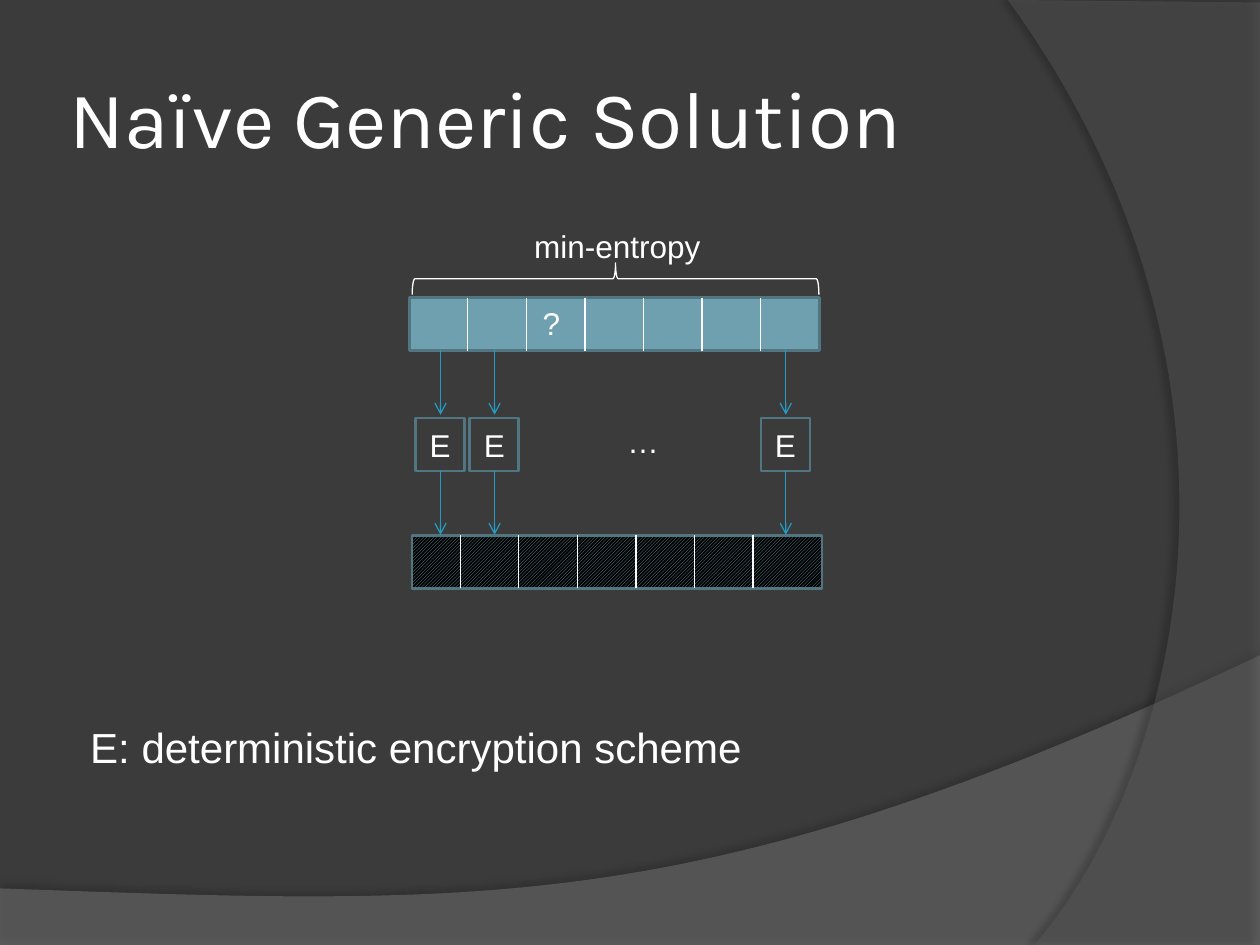
"""Build the slide on the naive generic solution."""
from lxml import etree
from pptx import Presentation
from pptx.dml.color import RGBColor
from pptx.enum.dml import MSO_PATTERN
from pptx.enum.shapes import MSO_CONNECTOR, MSO_SHAPE
from pptx.enum.text import MSO_ANCHOR, MSO_AUTO_SIZE, PP_ALIGN
from pptx.oxml.ns import qn
from pptx.util import Cm, Pt

RECT, BRACE = MSO_SHAPE.RECTANGLE, MSO_SHAPE.RIGHT_BRACE
LINE = MSO_CONNECTOR.STRAIGHT
HATCH = MSO_PATTERN.LIGHT_UPWARD_DIAGONAL
MID, FIT = MSO_ANCHOR.MIDDLE, MSO_AUTO_SIZE.SHAPE_TO_FIT_TEXT
LEFT, CENTER = PP_ALIGN.LEFT, PP_ALIGN.CENTER
WHITE, TEAL, EDGE, BLUE = "FFFFFF", "6EA0B0", "517682", "239BC2"
BLACK, BACK = "000000", "3B3B3B"


def color(text):
    return RGBColor.from_string(text)


def child(node, tag, **attrs):
    return etree.SubElement(node, qn(tag), {k: str(v) for k, v in attrs.items()})


def curve(a, b, c, d, steps=60):
    """Return points along a cubic curve, both ends included."""
    points = []
    for i in range(steps + 1):
        t = i / steps
        u = 1 - t
        points.append(tuple(
            u**3 * p + 3 * u * u * t * q + 3 * u * t * t * r + t**3 * s
            for p, q, r, s in zip(a, b, c, d)))
    return points


class Deck:
    """Hold the style and the current slide."""

    def __init__(self):
        self.show = Presentation()
        self.show.slide_width, self.show.slide_height = Cm(25.4), Cm(19.05)
        self.slide = self.show.slides.add_slide(self.show.slide_layouts[5])
        self.into = self.slide.shapes
        fill = self.slide.background.fill
        fill.solid()
        fill.fore_color.rgb = color(BACK)

    def text(self, frame, words, size, font="Arial", align=LEFT):
        frame.text = words
        para = frame.paragraphs[0]
        para.alignment = align
        para.font.size, para.font.name = Pt(size), font
        para.font.color.rgb = color(WHITE)

    def title(self, words, x, y, w, h):
        shape = self.slide.shapes.title
        shape.left, shape.top, shape.width, shape.height = map(Cm, (x, y, w, h))
        frame = shape.text_frame
        frame.vertical_anchor = MID
        frame.margin_left = frame.margin_right = Cm(0.13)
        self.text(frame, words, 46, "Karla")
        self.slide.shapes._spTree.append(shape._element)

    def swoosh(self, points, tint, alpha, shade, angle, away):
        """Draw a translucent outline with a soft shadow."""
        ends = [(Cm(x), Cm(y)) for x, y in points]
        form = self.into.build_freeform(*ends[0], scale=1.0)
        form.add_line_segments(ends[1:], close=True)
        shape = form.convert_to_shape()
        shape.fill.solid()
        shape.fill.fore_color.rgb = color(tint)
        shape.line.fill.background()
        props = shape._element.spPr
        child(props.find(".//" + qn("a:srgbClr")), "a:alpha", val=alpha * 1000)
        glow = child(child(props, "a:effectLst"), "a:outerShdw", blurRad=Pt(4),
                     dist=Pt(away), dir=angle * 60000, rotWithShape=0)
        child(child(glow, "a:srgbClr", val=BLACK), "a:alpha", val=shade * 1000)

    def shape(self, kind, x, y, w, h, edge=EDGE, width=1.5):
        shape = self.into.add_shape(kind, Cm(x), Cm(y), Cm(w), Cm(h))
        shape.shadow.inherit = False
        shape.fill.background()
        shape.line.color.rgb = color(edge)
        shape.line.width = Pt(width)
        return shape

    def line(self, x, top, end, tint=WHITE, arrow=False):
        """Draw a vertical line."""
        link = self.into.add_connector(LINE, Cm(x), Cm(top), Cm(x), Cm(end))
        link.line.color.rgb = color(tint)
        link.line.width = Pt(0.75)
        props = link._element.spPr
        if arrow:
            child(props.find(qn("a:ln")), "a:tailEnd", type="arrow")
        child(props, "a:effectLst")

    def bar(self, x, y, first, hatch=False):
        """Draw a bar cut into seven cells."""
        fill = self.shape(RECT, x, y, 8.26, 1.07).fill
        if hatch:
            fill.patterned()
            fill.pattern = HATCH
            fill.back_color.rgb = color(BLACK)
        else:
            fill.solid()
        fill.fore_color.rgb = color(TEAL)
        for i in range(6):
            self.line(first + i * 1.18, y, y + 1.07)

    def label(self, words, x, y, w, h=1.02, size=18):
        box = self.into.add_textbox(Cm(x), Cm(y), Cm(w), Cm(h))
        frame = box.text_frame
        frame.word_wrap, frame.auto_size = False, FIT
        self.text(frame, words, size)

    def coder(self, x):
        """Draw an E box with its arrows as one group."""
        self.into = self.slide.shapes.add_group_shape().shapes
        mid = x + 0.5
        self.line(mid, 7.06, 8.36, BLUE, True)
        frame = self.shape(RECT, x, 8.43, 0.99, 1.07).text_frame
        frame.vertical_anchor = MID
        self.text(frame, "E", 18, align=CENTER)
        self.line(mid, 9.5, 10.78, BLUE, True)
        self.into = self.slide.shapes


def main():
    deck = Deck()
    wave = curve((25.4, 13.21), (14.2, 18.52), (9.93, 18.26), (0, 17.91))
    deck.swoosh([(0, 19.05), (25.4, 19.05)] + wave, "7F7F7F", 45, 35, 270, 3.5)
    arc = curve((20.85, 19.05), (23.75, 15.72), (25.86, 7.62), (20.32, 0))
    deck.swoosh([(25.4, 0.05), (25.4, 19.05)] + arc, "5E5E5E", 40, 45, 180, 4)
    deck.title("Naïve Generic Solution", 1.27, 0.76, 20.75, 3.18)
    deck.bar(8.26, 6, 9.43)
    deck.bar(8.31, 10.79, 9.28, hatch=True)
    deck.label("min-entropy", 10.52, 4.45, 3.89)
    deck.shape(BRACE, 12.09, 1.52, 0.64, 8.2, WHITE, 0.75).rotation = 270
    deck.label("?", 10.69, 6, 0.86)
    for x in (8.38, 9.47, 15.34):
        deck.coder(x)
    deck.label("…", 12.4, 8.38, 1.14)
    deck.label("E: deterministic encryption scheme", 1.57, 14.43, 13.77, 1.27, 24)
    deck.show.save("out.pptx")


if __name__ == "__main__":
    main()
